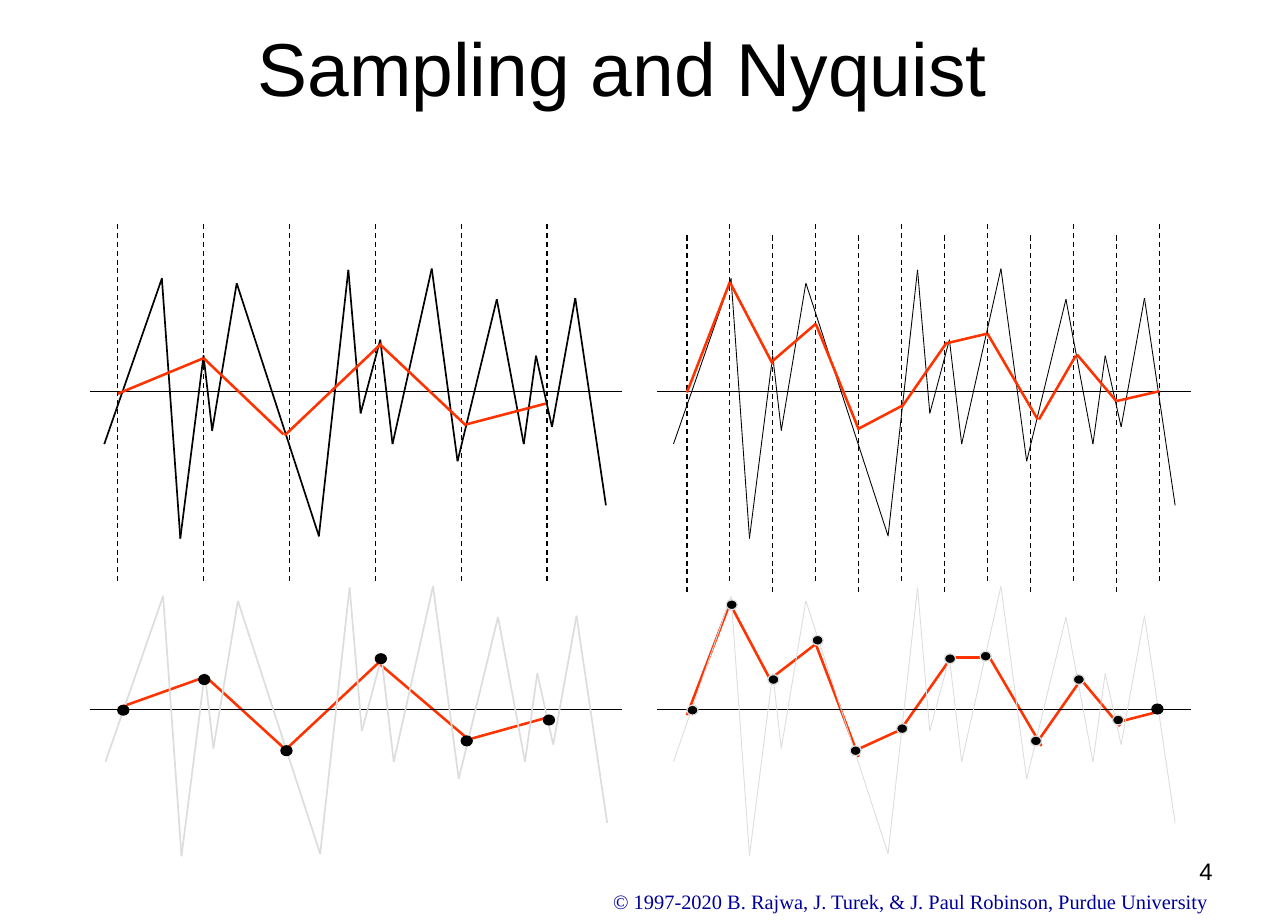
from itertools import pairwise

from lxml import etree
from pptx import Presentation
from pptx.dml.color import RGBColor
from pptx.enum.dml import MSO_LINE
from pptx.enum.shapes import MSO_CONNECTOR, MSO_SHAPE
from pptx.enum.text import MSO_ANCHOR, PP_ALIGN
from pptx.oxml.ns import qn
from pptx.util import Pt

STRAIGHT = MSO_CONNECTOR.STRAIGHT
OVAL = MSO_SHAPE.OVAL
DASH = MSO_LINE.DASH
TOP, MIDDLE = MSO_ANCHOR.TOP, MSO_ANCHOR.MIDDLE
LEFT, CENTER = PP_ALIGN.LEFT, PP_ALIGN.CENTER

BLACK = RGBColor(0x00, 0x00, 0x00)
RED = RGBColor(0xFF, 0x33, 0x00)
GRAY = RGBColor(0xDD, 0xDD, 0xDD)
NAVY = RGBColor(0x00, 0x00, 0x99)

PX = 9144
PAGE_SIZE = (1050, 750)

TITLE = "Sampling and Nyquist"
FOOTER = "© 1997-2020 B. Rajwa, J. Turek, & J. Paul Robinson, Purdue University"
PAGE_NUMBER = "4"

WAVE = [
    (85, 362), (132, 227), (147, 439), (166, 290), (173, 351), (193, 231),
    (260, 437), (284, 220), (294, 337), (310, 277), (320, 362), (352, 219),
    (373, 376), (405, 244), (427, 362), (437, 290), (450, 348), (469, 243),
    (494, 412),
]
WAVE_BREAKS = [0, 2, 5, *range(7, len(WAVE))]

COARSE_TOP = [
    (96, 321, 166, 292), (166, 292, 231, 354), (232, 355, 311, 280),
    (310, 281, 380, 347), (380, 346, 445, 329),
]
FINE_TOP = [
    (560, 320, 595, 230), (595, 230, 630, 297), (629, 295, 665, 264),
    (665, 264, 700, 350), (699, 350, 735, 331), (735, 332, 772, 279),
    (771, 280, 805, 272), (805, 272, 846, 342), (847, 342, 877, 290),
    (878, 289, 910, 327), (910, 327, 945, 319),
]
COARSE_BOTTOM = [
    (97, 577, 167, 552), (167, 551, 236, 614), (233, 611, 311, 538),
    (308, 540, 381, 602), (385, 602, 446, 585),
]
FINE_BOTTOM = [
    (560, 583, 595, 492), (595, 492, 630, 558), (630, 552, 665, 525),
    (665, 525, 700, 617), (699, 611, 734, 595), (737, 591, 772, 541),
    (771, 536, 806, 536), (805, 533, 849, 608), (847, 603, 882, 553),
    (878, 550, 913, 592), (910, 589, 945, 580),
]

COARSE_DOTS = [(96, 575), (162, 550), (229, 608), (306, 533), (376, 600), (443, 583)]
FINE_DOTS = [
    (592, 489), (662, 518), (560, 575), (626, 550), (693, 608), (770, 533),
    (840, 600), (907, 583), (731, 590), (875, 550), (799, 531),
]
LAST_DOT = (939, 574)
DOT_WIDTH, DOT_HEIGHT = 9, 8

AXES = [(73, 507), (536, 971)]
TOP_AXIS, BOTTOM_AXIS = 319, 578
RIGHT_SHIFT, BOTTOM_SHIFT = 464, 259
SAMPLE_STEP, SAMPLE_COUNT = 70, 6
SAMPLE_GRIDS = [(96, 183, 475), (560, 192, 483), (595, 183, 475)]

deck = Presentation()
deck.slide_width, deck.slide_height = [side * PX for side in PAGE_SIZE]
page = deck.slides.add_slide(deck.slide_layouts[6])


def add_text(text, *, at, size, font="Arial", color=BLACK, align=LEFT, anchor=TOP, spacing=None):
    box = page.shapes.add_textbox(*[length * PX for length in at])
    frame = box.text_frame
    frame.word_wrap = True
    frame.vertical_anchor = anchor
    para = frame.paragraphs[0]
    para.alignment = align
    if spacing:
        para.line_spacing = spacing
    span = para.add_run()
    span.text = text
    span.font.name = font
    span.font.size = Pt(size)
    span.font.color.rgb = color


def add_line(x1, y1, x2, y2, color, width, dash=None):
    line = page.shapes.add_connector(STRAIGHT, *[v * PX for v in (x1, y1, x2, y2)])
    line.line.color.rgb = color
    line.line.width = Pt(width)
    if dash:
        line.line.dash_style = dash
    etree.SubElement(line._element.spPr, qn("a:effectLst"))


def add_stroke(points, color, width):
    if len(points) == 2:
        add_line(*points[0], *points[1], color, width)
        return
    builder = page.shapes.build_freeform(*points[0], scale=PX)
    builder.add_line_segments(points[1:], close=False)
    stroke = builder.convert_to_shape()
    stroke.shadow.inherit = False
    stroke.fill.background()
    stroke.line.color.rgb = color
    stroke.line.width = Pt(width)


def add_wave(shift_x, shift_y, color, width):
    points = [(x + shift_x, y + shift_y) for x, y in WAVE]
    for first, last in pairwise(WAVE_BREAKS):
        add_stroke(points[first:last + 1], color, width)


def add_trace(segments):
    for segment in segments:
        add_line(*segment, RED, 1.5)


def add_axis(ends, y):
    add_line(ends[0], y, ends[1], y, BLACK, 0.5)


def add_dots(dots, outline):
    for x, y in dots:
        dot = page.shapes.add_shape(OVAL, x * PX, y * PX, DOT_WIDTH * PX, DOT_HEIGHT * PX)
        dot.shadow.inherit = False
        dot.fill.solid()
        dot.fill.fore_color.rgb = BLACK
        dot.line.color.rgb = outline
        dot.line.width = Pt(0.75)


add_text(FOOTER, at=(490, 720, 516, 30), size=12, font="Times New Roman", color=NAVY)
add_trace(COARSE_BOTTOM + FINE_BOTTOM)
add_text(TITLE, at=(35, 0, 945, 108), size=44, align=CENTER, anchor=MIDDLE)

for ends, shift, width in zip(AXES, (0, RIGHT_SHIFT), (1, 0.5)):
    add_axis(ends, TOP_AXIS)
    add_wave(shift, 0, BLACK, width)

for left, top, bottom in SAMPLE_GRIDS:
    for index in range(SAMPLE_COUNT):
        x = left + index * SAMPLE_STEP
        add_line(x, top, x, bottom, BLACK, 0.75, DASH)

for ends in AXES:
    add_axis(ends, BOTTOM_AXIS)
add_wave(1, BOTTOM_SHIFT, GRAY, 1)
add_dots(COARSE_DOTS, BLACK)
add_wave(RIGHT_SHIFT, BOTTOM_SHIFT, GRAY, 0.5)
add_dots(FINE_DOTS, GRAY)
add_dots([LAST_DOT], BLACK)
add_trace(COARSE_TOP + FINE_TOP)
add_text(PAGE_NUMBER, at=(968, 696, 31, 31), size=14, spacing=0.9)

deck.save("out.pptx")
